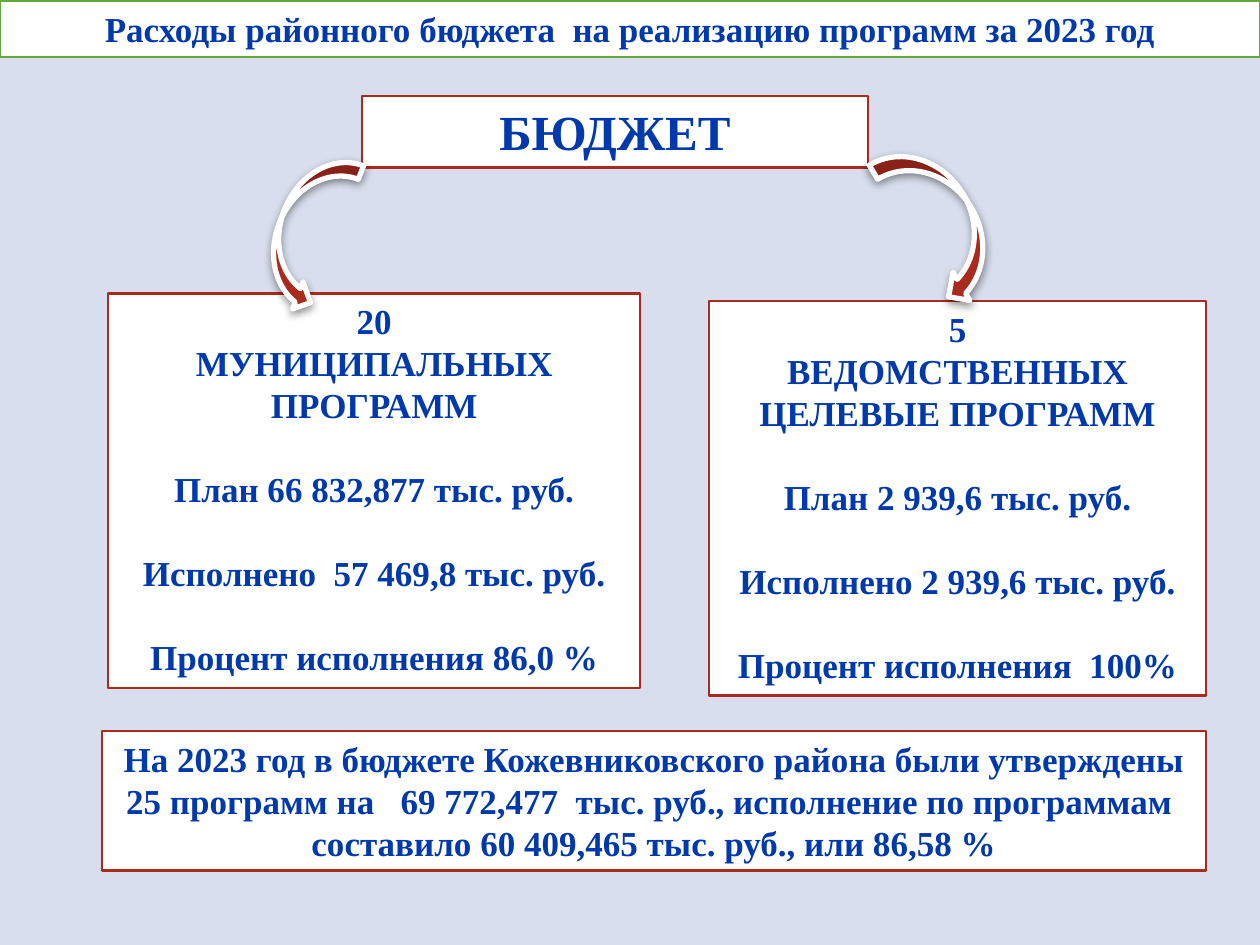
from dataclasses import dataclass

import pptx
import pptx.dml.color
import pptx.enum.shapes
import pptx.enum.text
import pptx.oxml.ns
import pptx.util
from lxml import etree
from pptx.util import Inches

SHAPE = pptx.enum.shapes.MSO_SHAPE


@dataclass(frozen=True)
class Theme:
    font: str = "Times New Roman"
    background: str = "D8DEED"
    white: str = "FFFFFF"
    text: str = "0039AC"
    red: str = "AA2B1E"
    green: str = "64A73B"
    shadow: str = "000000"
    body: int = 20
    heading: int = 28
    leading: float = 1.2


@dataclass(frozen=True)
class Box:
    left: float
    top: float
    width: float
    height: float
    blocks: tuple[tuple[str, ...], ...]  # blocks are set one line apart
    size: int
    line: str


@dataclass(frozen=True)
class Arrow:
    kind: SHAPE
    left: float
    top: float
    width: float
    height: float
    rotation: float


THEME = Theme()

BOXES = (
    Box(0, 0.01, 10, 0.44,
        (("Расходы районного бюджета  на реализацию программ за 2023 год",),),
        THEME.body, THEME.green),
    Box(2.87, 0.76, 4.02, 0.57, (("БЮДЖЕТ",),), THEME.heading, THEME.red),
    Box(5.63, 2.39, 3.94, 3.13,
        (("5", "ВЕДОМСТВЕННЫХ ЦЕЛЕВЫЕ ПРОГРАММ"),
         ("План 2 939,6 тыс. руб.",),
         ("Исполнено 2 939,6 тыс. руб.",),
         ("Процент исполнения  100%",)),
        THEME.body, THEME.red),
    Box(0.86, 2.33, 4.22, 3.13,
        (("20", "МУНИЦИПАЛЬНЫХ ПРОГРАММ"),
         ("План 66 832,877 тыс. руб.",),
         ("Исполнено  57 469,8 тыс. руб.",),
         ("Процент исполнения 86,0 %",)),
        THEME.body, THEME.red),
    Box(0.81, 5.8, 8.76, 1.11,
        (("На 2023 год в бюджете Кожевниковского района были утверждены "
          "25 программ на   69 772,477  тыс. руб., исполнение по программам  "
          "составило 60 409,465 тыс. руб., или 86,58 %",),),
        THEME.body, THEME.red),
)

ARROWS = (
    Arrow(SHAPE.CURVED_LEFT_ARROW, 7.21, 1.08, 0.52, 1.35, 328.9),
    Arrow(SHAPE.CURVED_RIGHT_ARROW, 2.21, 1.19, 0.46, 1.28, 21.2),
)


def rgb(value: str) -> pptx.dml.color.RGBColor:
    return pptx.dml.color.RGBColor.from_string(value)


def add_shape(slide, kind: SHAPE, item: Box | Arrow, fill: str, line: str, weight: float):
    s = slide.shapes.add_shape(kind, Inches(item.left), Inches(item.top),
                               Inches(item.width), Inches(item.height))
    s.shadow.inherit = False
    s.fill.solid()
    s.fill.fore_color.rgb = rgb(fill)
    s.line.color.rgb = rgb(line)
    s.line.width = pptx.util.Pt(weight)
    return s


def draw_box(slide, box: Box) -> None:
    s = add_shape(slide, SHAPE.RECTANGLE, box, THEME.white, box.line, 1.25)
    tf = s.text_frame
    tf.word_wrap = True
    tf.auto_size = pptx.enum.text.MSO_AUTO_SIZE.SHAPE_TO_FIT_TEXT
    tf.vertical_anchor = pptx.enum.text.MSO_ANCHOR.TOP
    tf.text = "\n".join(text for block in box.blocks for text in block)
    leading = pptx.util.Pt(box.size * THEME.leading)
    for p in tf.paragraphs:
        p.alignment = pptx.enum.text.PP_ALIGN.CENTER
        p.line_spacing = leading
        for r in p.runs:
            r.font.name = THEME.font
            r.font.size = pptx.util.Pt(box.size)
            r.font.bold = True
            r.font.color.rgb = rgb(THEME.text)

    # One line of space before every block but the first
    start = 0
    for block in box.blocks[:-1]:
        start += len(block)
        tf.paragraphs[start].space_before = leading


def draw_arrow(slide, arrow: Arrow) -> None:
    s = add_shape(slide, arrow.kind, arrow, THEME.red, THEME.white, 3)
    s.rotation = arrow.rotation

    # Soft shadow straight below
    qn = pptx.oxml.ns.qn
    effects = s._element.spPr.find(qn("a:effectLst"))
    shadow = etree.SubElement(effects, qn("a:outerShdw"), blurRad=str(pptx.util.Pt(5)),
                              dist=str(pptx.util.Pt(2)), dir="5400000", rotWithShape="0")
    color = etree.SubElement(shadow, qn("a:srgbClr"), val=THEME.shadow)
    etree.SubElement(color, qn("a:alpha"), val="43000")


def main() -> None:
    prs = pptx.Presentation()
    prs.slide_width, prs.slide_height = Inches(10), Inches(7.5)
    slide = prs.slides.add_slide(prs.slide_layouts[6])
    slide.background.fill.solid()
    slide.background.fill.fore_color.rgb = rgb(THEME.background)

    # Title, budget and programme boxes, then arrows over them, then the summary
    *upper, summary = BOXES
    for box in upper:
        draw_box(slide, box)
    for arrow in ARROWS:
        draw_arrow(slide, arrow)
    draw_box(slide, summary)

    prs.save("out.pptx")


if __name__ == "__main__":
    main()
